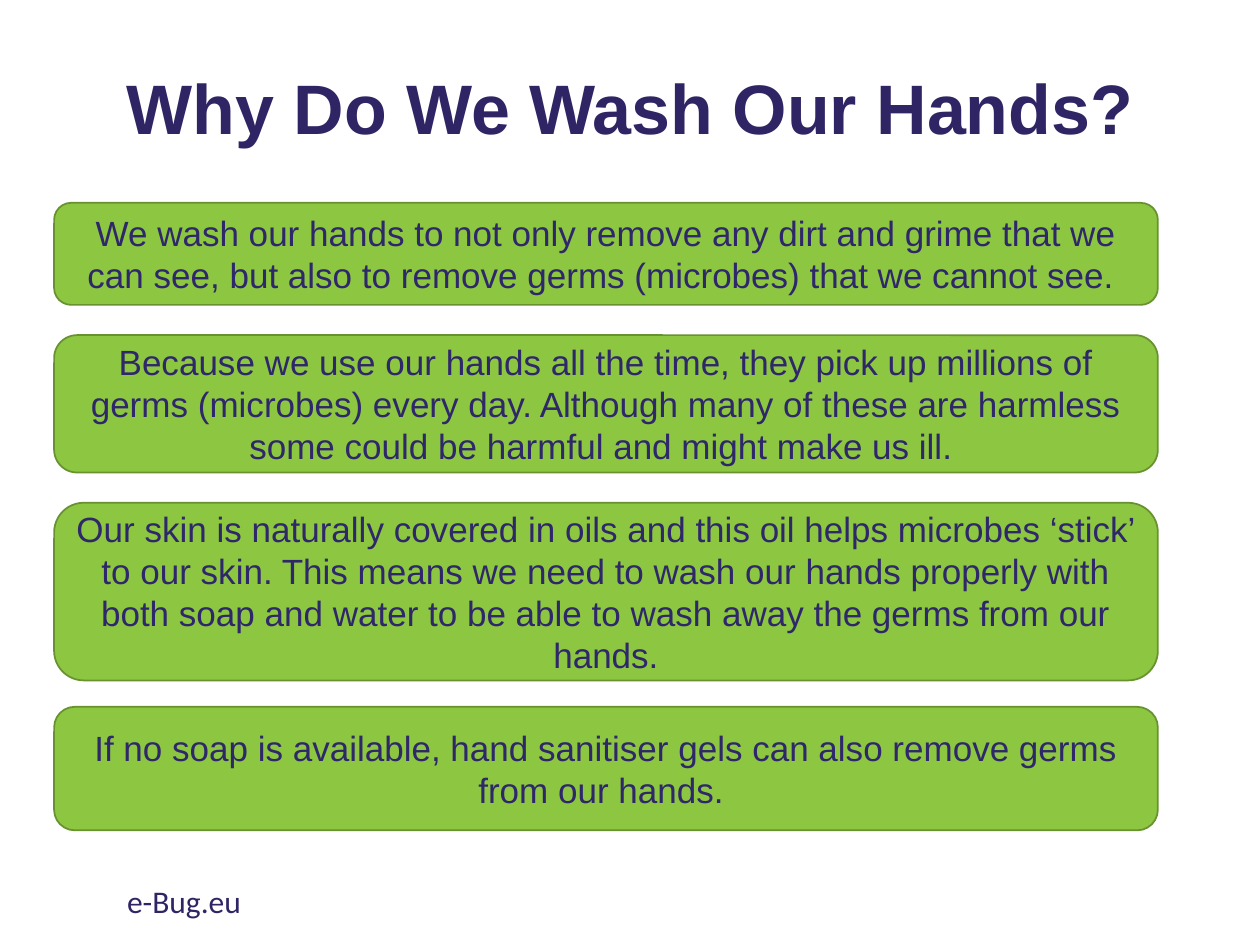
import pptx
import pptx.dml.color
import pptx.enum.shapes
import pptx.enum.text
import pptx.util
from pptx.util import Inches

GREEN = "8DC641"
DARK_GREEN = "689230"
TITLE_COLOR = "302564"
REASON_COLOR = "2E276A"

REASONS = [
    (1.61, 0.81, "We wash our hands to not only remove any dirt and grime that we can see, "
                 "but also to remove germs (microbes) that we cannot see. "),
    (2.66, 1.09, "Because we use our hands all the time, they pick up millions of germs (microbes) "
                 "every day. Although many of these are harmless some could be harmful and might "
                 "make us ill. "),
    (3.99, 1.41, "Our skin is naturally covered in oils and this oil helps microbes ‘stick’ to our "
                 "skin. This means we need to wash our hands properly with both soap and water to "
                 "be able to wash away the germs from our hands."),
    (5.61, 0.98, "If no soap is available, hand sanitiser gels can also remove germs from our hands. "),
]


def color(hex_string):
    return pptx.dml.color.RGBColor.from_string(hex_string)


def write_text(shape, text, size, font_name, hex_string, alignment, anchor, bold=False):
    text_frame = shape.text_frame
    text_frame.word_wrap = True
    text_frame.auto_size = pptx.enum.text.MSO_AUTO_SIZE.NONE
    text_frame.vertical_anchor = anchor
    text_frame.text = text
    paragraph = text_frame.paragraphs[0]
    paragraph.alignment = alignment
    font = paragraph.runs[0].font
    font.size = pptx.util.Pt(size)
    font.name = font_name
    font.bold = bold
    font.color.rgb = color(hex_string)


def place_title(slide, left, top, width, height):
    title = slide.shapes.title
    title.left, title.top, title.width, title.height = left, top, width, height
    write_text(title, "Why Do We Wash Our Hands?", 40, "Arial", TITLE_COLOR,
               pptx.enum.text.PP_ALIGN.CENTER, pptx.enum.text.MSO_ANCHOR.MIDDLE, bold=True)
    title.text_frame.paragraphs[0].line_spacing = 0.9


def add_reason(slide, text, left, top, width, height):
    shape = slide.shapes.add_shape(
        pptx.enum.shapes.MSO_SHAPE.ROUNDED_RECTANGLE, left, top, width, height)
    shape.shadow.inherit = False
    shape.fill.solid()
    shape.fill.fore_color.rgb = color(GREEN)
    shape.line.color.rgb = color(DARK_GREEN)
    shape.line.width = pptx.util.Pt(1)
    write_text(shape, text, 20, "Arial", REASON_COLOR,
               pptx.enum.text.PP_ALIGN.CENTER, pptx.enum.text.MSO_ANCHOR.MIDDLE)


def add_footer(slide, left, top, width, height):
    footer = slide.shapes.add_textbox(left, top, width, height)
    write_text(footer, "e-Bug.eu", 18, "Calibri", TITLE_COLOR,
               pptx.enum.text.PP_ALIGN.LEFT, pptx.enum.text.MSO_ANCHOR.TOP)


def main():
    presentation = pptx.Presentation()
    presentation.slide_width = Inches(10)
    presentation.slide_height = Inches(7.5)
    slide = presentation.slides.add_slide(presentation.slide_layouts.get_by_name("Title Only"))
    place_title(slide, Inches(0.69), Inches(0.16), Inches(8.62), Inches(1.45))
    add_footer(slide, Inches(0.91), Inches(6.95), Inches(3.38), Inches(0.4))
    for top, height, text in REASONS:
        add_reason(slide, text, Inches(0.43), Inches(top), Inches(8.76), Inches(height))
    presentation.save("out.pptx")


if __name__ == "__main__":
    main()
